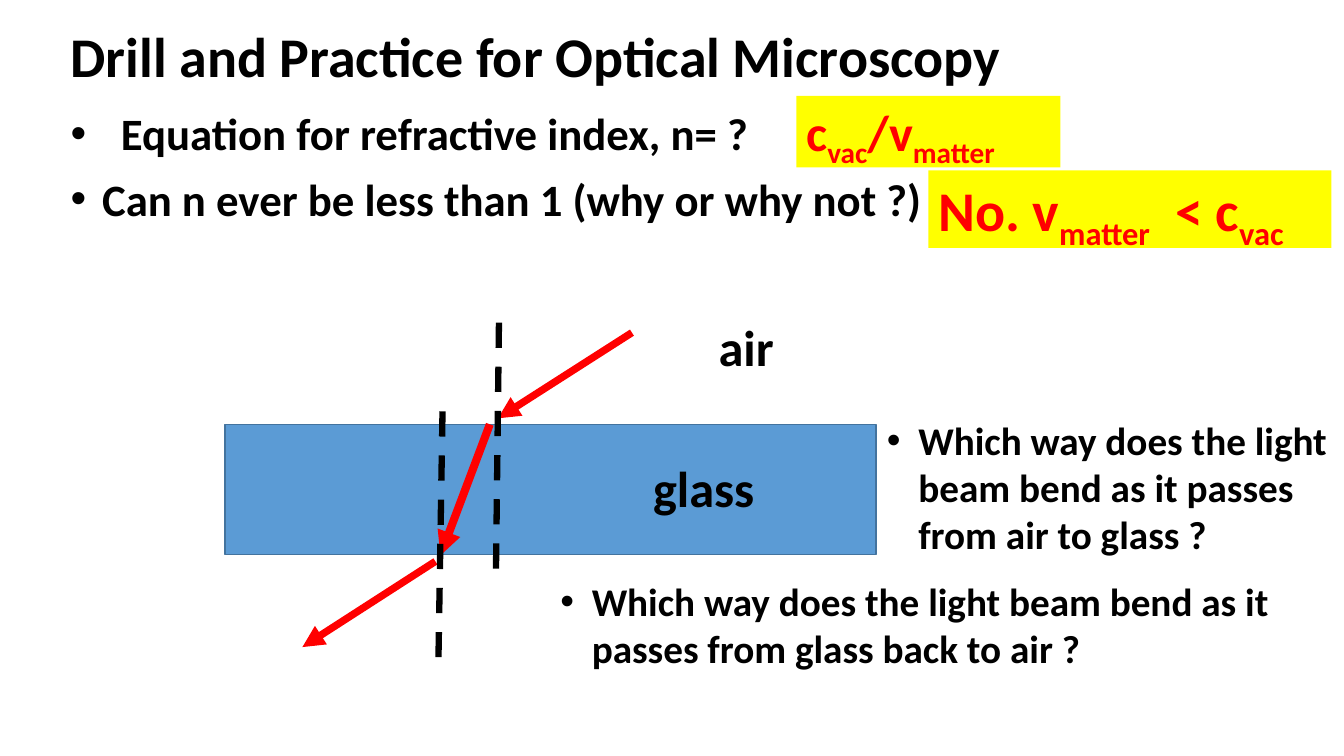
"""Build the optical microscopy drill slide about refraction in glass."""
from lxml import etree
from pptx import Presentation
from pptx.dml.color import RGBColor
from pptx.enum.dml import MSO_LINE
from pptx.enum.shapes import MSO_CONNECTOR, MSO_SHAPE
from pptx.enum.text import MSO_ANCHOR, MSO_AUTO_SIZE, PP_ALIGN
from pptx.oxml.ns import qn
from pptx.util import Pt

LEFT, TOP, NO_FIT = PP_ALIGN.LEFT, MSO_ANCHOR.TOP, MSO_AUTO_SIZE.NONE
RECT, STRAIGHT, DASH = MSO_SHAPE.RECTANGLE, MSO_CONNECTOR.STRAIGHT, MSO_LINE.DASH

COLORS = {"ink": "000000", "answer": "FF0000", "mark": "FFFF00",
          "glass": "5B9BD5", "edge": "43739E", "ray": "FF0000"}
FONT = {"name": "Calibri", "bold": True}
HANG = 22.5

TITLE = ("Drill and Practice for Optical Microscopy", 40, (43.2, 11.5, 894, 55.4))
QUESTIONS = [("Equation for refractive index, n= ?", 36),
             ("Can n ever be less than 1 (why or why not ?)", HANG)]
QUESTIONS_BOX = (43.2, 72, 672, 94)
BEND_QUESTIONS = [
    ("Which way does the light beam bend as it passes from air to glass ?",
     (626.4, 293.8, 333.4, 108.7)),
    ("Which way does the light beam bend as it passes from glass back to air ?",
     (393.1, 409, 558, 74.9)),
]
ANSWERS = [
    (["c", "vac", "/v", "matter"], 36, (568.8, 68.4, 188.6, 51.1)),
    (["No. v", "matter", "  < c", "vac"], 40, (663.1, 121.7, 288, 55.4)),
]
MEDIA = [("air", (506.2, 222.5, 162.7, 51.1)), ("glass", (459.4, 322.6, 158.4, 51.1))]
GLASS_BOX = (160.6, 303.1, 465.1, 92.9)
NORMALS = [(356.4, 230.4, 354.2, 414.7), (316.1, 293.8, 313.2, 469.4)]
RAYS = [((451.4, 237.6, 355.7, 298.8), 5.25),
        ((349.9, 303.1, 314.6, 396.7), 5.75),
        ((311, 401, 216, 462.2), 5.25)]


def rgb(key):
    return RGBColor.from_string(COLORS[key])


def points(values):
    return [Pt(v) for v in values]


def place(s, box):
    s.left, s.top, s.width, s.height = points(box)


def frame(s):
    tf = s.text_frame
    for name, value in {"word_wrap": True, "auto_size": NO_FIT,
                        "vertical_anchor": TOP}.items():
        setattr(tf, name, value)
    return tf


def write(p, pieces, size, color="ink", hang=0, before=0):
    p.alignment, p.space_before = LEFT, Pt(before)
    for i, text in enumerate(pieces):
        r = p.add_run()
        r.text = text
        for name, value in {**FONT, "size": Pt(size)}.items():
            setattr(r.font, name, value)
        r.font.color.rgb = rgb(color)
        if i % 2:
            r.font._element.set("baseline", "-25000")
    if hang:
        pPr = p._p.get_or_add_pPr()
        pPr.set("marL", str(Pt(hang)))
        pPr.set("indent", str(-Pt(hang)))
        etree.SubElement(pPr, qn("a:buFont")).set("typeface", "Arial")
        etree.SubElement(pPr, qn("a:buChar")).set("char", "•")


def add_text(slide, text, size, box, hang=0):
    s = slide.shapes.add_textbox(*points(box))
    write(frame(s).paragraphs[0], [text], size, hang=hang)


def add_box(slide, box, fill, edge=None):
    s = slide.shapes.add_shape(RECT, *points(box))
    s.shadow.inherit = False
    s.fill.solid()
    s.fill.fore_color.rgb = rgb(fill)
    if edge:
        s.line.color.rgb = rgb(edge)
        s.line.width = Pt(1)
    else:
        s.line.fill.background()
    return s


def add_line(slide, ends, color, width, arrow=False):
    s = slide.shapes.add_connector(STRAIGHT, *points(ends))
    s.line.color.rgb = rgb(color)
    s.line.width = Pt(width)
    if arrow:
        etree.SubElement(s.line._get_or_add_ln(), qn("a:tailEnd")).set("type", "triangle")
    else:
        s.line.dash_style = DASH
    etree.SubElement(s._element.spPr, qn("a:effectLst"))


def main():
    prs = Presentation()
    prs.slide_width, prs.slide_height = Pt(960), Pt(540)
    slide = prs.slides.add_slide(prs.slide_layouts[1])
    title, body = slide.placeholders

    text, size, box = TITLE
    place(title, box)
    write(frame(title).paragraphs[0], [text], size)

    place(body, QUESTIONS_BOX)
    tf = frame(body)
    for i, (text, hang) in enumerate(QUESTIONS):
        p = tf.add_paragraph() if i else tf.paragraphs[0]
        write(p, [text], 32, hang=hang, before=8.5 * i)

    for pieces, size, box in ANSWERS:
        s = add_box(slide, box, "mark")
        write(frame(s).paragraphs[0], pieces, size, "answer")

    add_box(slide, GLASS_BOX, "glass", "edge")
    for ends, width in RAYS:
        add_line(slide, ends, "ray", width, arrow=True)
    for ends in NORMALS:
        add_line(slide, ends, "ink", 4.5)
    for text, box in MEDIA:
        add_text(slide, text, 36, box)
    for text, box in BEND_QUESTIONS:
        add_text(slide, text, 28, box, HANG)

    prs.save("out.pptx")


if __name__ == "__main__":
    main()
